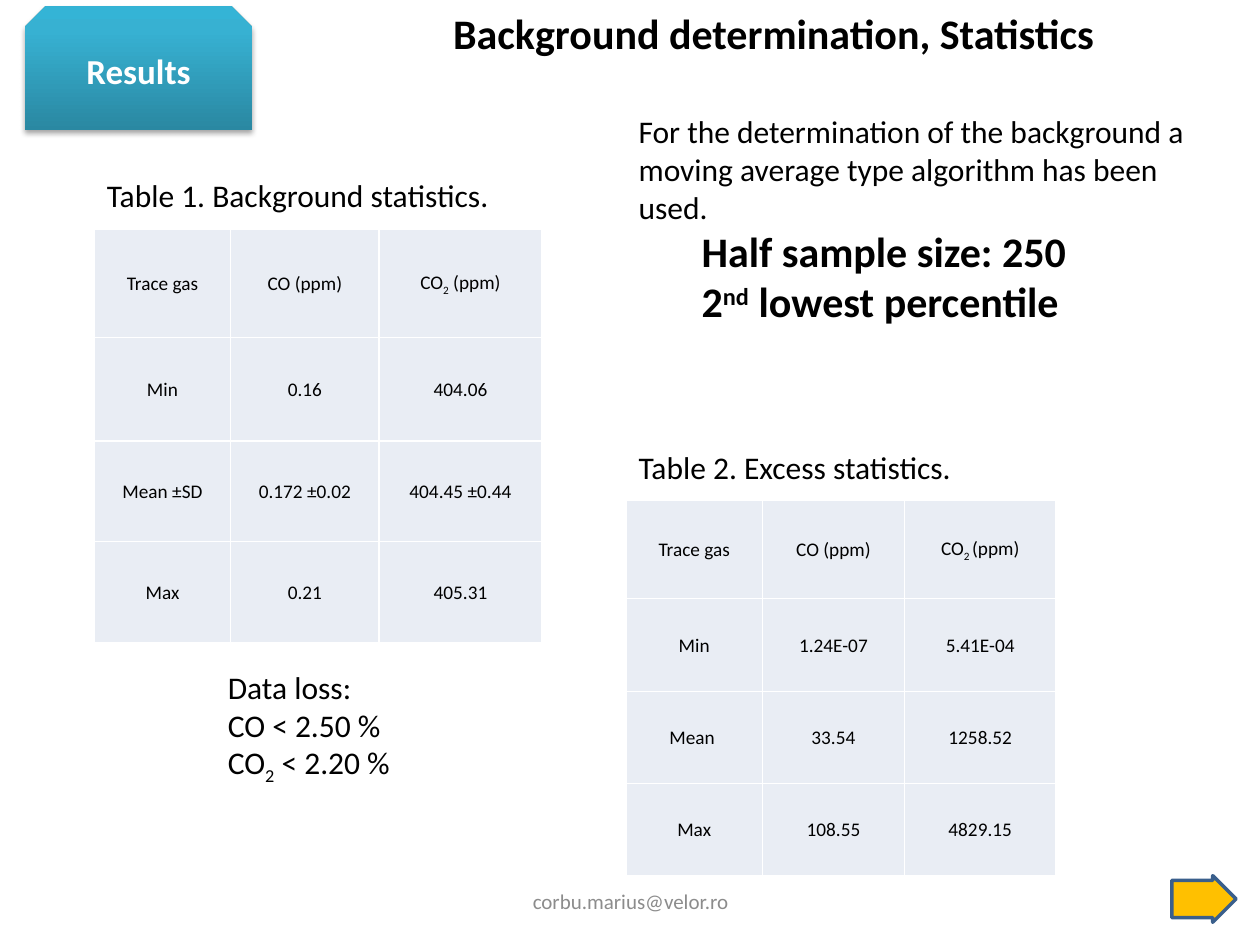
from copy import deepcopy
from dataclasses import dataclass

from pptx import Presentation
from pptx.dml.color import RGBColor
from pptx.enum.shapes import MSO_SHAPE
from pptx.enum.text import MSO_ANCHOR, MSO_AUTO_SIZE, PP_ALIGN
from pptx.oxml import parse_xml
from pptx.oxml.ns import nsdecls, qn
from pptx.util import Inches, Pt

LEFT = PP_ALIGN.LEFT
CENTER = PP_ALIGN.CENTER
TOP = MSO_ANCHOR.TOP
MIDDLE = MSO_ANCHOR.MIDDLE
GROW = MSO_AUTO_SIZE.SHAPE_TO_FIT_TEXT
FIXED = MSO_AUTO_SIZE.NONE
RIGHT_ARROW = MSO_SHAPE.RIGHT_ARROW
SNIPPED_RECTANGLE = MSO_SHAPE.SNIP_2_SAME_RECTANGLE

SUBSCRIPT = -25000
SUPERSCRIPT = 30000


@dataclass(frozen=True)
class Theme:
    font: str = "Calibri"
    text: str = "000000"
    white: str = "FFFFFF"
    footer: str = "8C8C8C"
    cell: str = "E9EDF4"
    arrow: str = "FFC000"
    arrow_line: str = "3A5F8C"
    badge: tuple = ((0, "2A88A2"), (0.8, "37B1D2"), (1, "34B4D6"))
    title_size: int = 24
    badge_size: int = 20
    body_size: int = 18
    footer_size: int = 12
    table_size: int = 11


THEME = Theme()


def rgb(value):
    return RGBColor.from_string(value)


def write_text(text_frame, text, size=THEME.body_size, bold=False,
               color=THEME.text, align=LEFT):
    paragraph = text_frame.paragraphs[-1]
    if paragraph.runs:
        paragraph = text_frame.add_paragraph()
    paragraph.alignment = align
    parts = [(text, 0)] if isinstance(text, str) else text
    for content, baseline in parts:
        run = paragraph.add_run()
        run.text = content
        run.font.name = THEME.font
        run.font.size = Pt(size)
        run.font.bold = bold
        run.font.color.rgb = rgb(color)
        if baseline:
            run.font._element.set("baseline", str(baseline))
    return paragraph


class SlideBuilder:
    def __init__(self, slide, theme):
        self.slide = slide
        self.theme = theme

    def shape(self, kind, left, top, width, height):
        shape = self.slide.shapes.add_shape(
            kind, Inches(left), Inches(top), Inches(width), Inches(height))
        shape.shadow.inherit = False
        return shape

    def arrow(self, left, top, width, height):
        shape = self.shape(RIGHT_ARROW, left, top, width, height)
        shape.adjustments[0] = 0.8
        shape.adjustments[1] = 0.5
        shape.fill.solid()
        shape.fill.fore_color.rgb = rgb(self.theme.arrow)
        shape.line.color.rgb = rgb(self.theme.arrow_line)
        shape.line.width = Pt(2)

    def badge(self, text, left, top, width, height):
        shape = self.shape(SNIPPED_RECTANGLE, left, top, width, height)
        shape.line.fill.background()
        shape.fill.gradient()
        shape.fill.gradient_angle = 90
        properties = shape._element.spPr
        stop_list = properties.find(qn("a:gradFill")).find(qn("a:gsLst"))
        stop_list.append(deepcopy(stop_list[-1]))
        for stop, (position, color) in zip(shape.fill.gradient_stops, self.theme.badge):
            stop.position = position
            stop.color.rgb = rgb(color)
        properties.find(qn("a:effectLst")).append(parse_xml(
            f'<a:outerShdw {nsdecls("a")} blurRad="{Pt(3.1)}" dist="{Pt(1.8)}" '
            'dir="5400000" rotWithShape="0"><a:srgbClr val="000000">'
            '<a:alpha val="35000"/></a:srgbClr></a:outerShdw>'))
        frame = shape.text_frame
        frame.word_wrap = True
        frame.vertical_anchor = MIDDLE
        frame.margin_left = frame.margin_right = Inches(0.4)
        frame.margin_top = frame.margin_bottom = Inches(0.28)
        paragraph = write_text(frame, text, size=self.theme.badge_size, bold=True,
                               color=self.theme.white, align=CENTER)
        paragraph.line_spacing = 0.9
        paragraph.space_after = Pt(7)

    def text(self, lines, left, top, width, height, wrap=False, grow=True,
             anchor=TOP, **style):
        box = self.slide.shapes.add_textbox(
            Inches(left), Inches(top), Inches(width), Inches(height))
        frame = box.text_frame
        frame.word_wrap = wrap
        frame.auto_size = GROW if grow else FIXED
        frame.vertical_anchor = anchor
        for line in lines:
            write_text(frame, line, **style)
        return frame

    def border(self, cell):
        for side in ("lnL", "lnR", "lnT", "lnB"):
            cell._tc.get_or_add_tcPr().append(parse_xml(
                f'<a:{side} {nsdecls("a")} w="{Pt(1)}"><a:solidFill>'
                f'<a:srgbClr val="{self.theme.white}"/></a:solidFill></a:{side}>'))

    def table(self, rows, left, top, widths, heights):
        table = self.slide.shapes.add_table(
            len(rows), len(widths), Inches(left), Inches(top),
            Inches(sum(widths)), Inches(sum(heights))).table
        for column, width in zip(table.columns, widths):
            column.width = Inches(width)
        for row, height in zip(table.rows, heights):
            row.height = Inches(height)
        for row_index, row in enumerate(rows):
            for column_index, text in enumerate(row):
                cell = table.cell(row_index, column_index)
                self.border(cell)
                cell.fill.solid()
                cell.fill.fore_color.rgb = rgb(self.theme.cell)
                cell.vertical_anchor = MIDDLE
                cell.margin_left = cell.margin_right = cell.margin_top = Inches(0.01)
                cell.margin_bottom = 0
                write_text(cell.text_frame, text, size=self.theme.table_size, align=CENTER)


def main():
    presentation = Presentation()
    presentation.slide_width = Inches(10)
    presentation.slide_height = Inches(7.5)
    slide = presentation.slides.add_slide(presentation.slide_layouts[6])
    builder = SlideBuilder(slide, THEME)

    builder.arrow(9.3, 6.95, 0.51, 0.37)
    builder.badge("Results", 0.2, 0.05, 1.8, 0.98)
    builder.text(["Background determination, Statistics"], 3.42, 0.01, 5.44, 0.5,
                 size=THEME.title_size, bold=True, align=CENTER)

    method = builder.text(
        ["For the determination of the background a moving average type "
         "algorithm has been used."], 4.97, 0.84, 4.58, 1.82, wrap=True)
    for line in ("\tHalf sample size: 250",
                 [("\t2", 0), ("nd", SUPERSCRIPT), (" lowest percentile", 0)]):
        write_text(method, line, size=THEME.title_size, bold=True)

    builder.text(["Table 1. Background statistics."], 0.75, 1.35, 3.26, 0.4)
    builder.text(["Data loss:", "CO < 2.50 %",
                  [("CO", 0), ("2", SUBSCRIPT), (" < 2.20 %", 0)]],
                 1.71, 5.25, 1.51, 1.01)
    builder.text(["Table 2. Excess statistics."], 4.97, 3.51, 2.71, 0.4)
    builder.text(["corbu.marius@velor.ro"], 3.42, 6.95, 3.17, 0.4, wrap=True,
                 grow=False, anchor=MIDDLE, size=THEME.footer_size,
                 color=THEME.footer, align=CENTER)

    builder.table(
        [["Trace gas", "CO (ppm)", [("CO", 0), ("2", SUBSCRIPT), (" (ppm)", 0)]],
         ["Min", "0.16", "404.06"],
         ["Mean ±SD", "0.172 ±0.02", "404.45 ±0.44"],
         ["Max", "0.21", "405.31"]],
        0.75, 1.82, (1.08, 1.18, 1.29), (0.86, 0.82, 0.8, 0.8))
    builder.table(
        [["Trace gas", "CO (ppm)", [("CO", 0), ("2 ", SUBSCRIPT), ("(ppm)", 0)]],
         ["Min", "1.24E-07", "5.41E-04"],
         ["Mean ", "33.54", "1258.52"],
         ["Max", "108.55", "4829.15"]],
        4.97, 3.97, (1.08, 1.13, 1.2), (0.78, 0.74, 0.73, 0.73))

    presentation.save("out.pptx")


if __name__ == "__main__":
    main()
